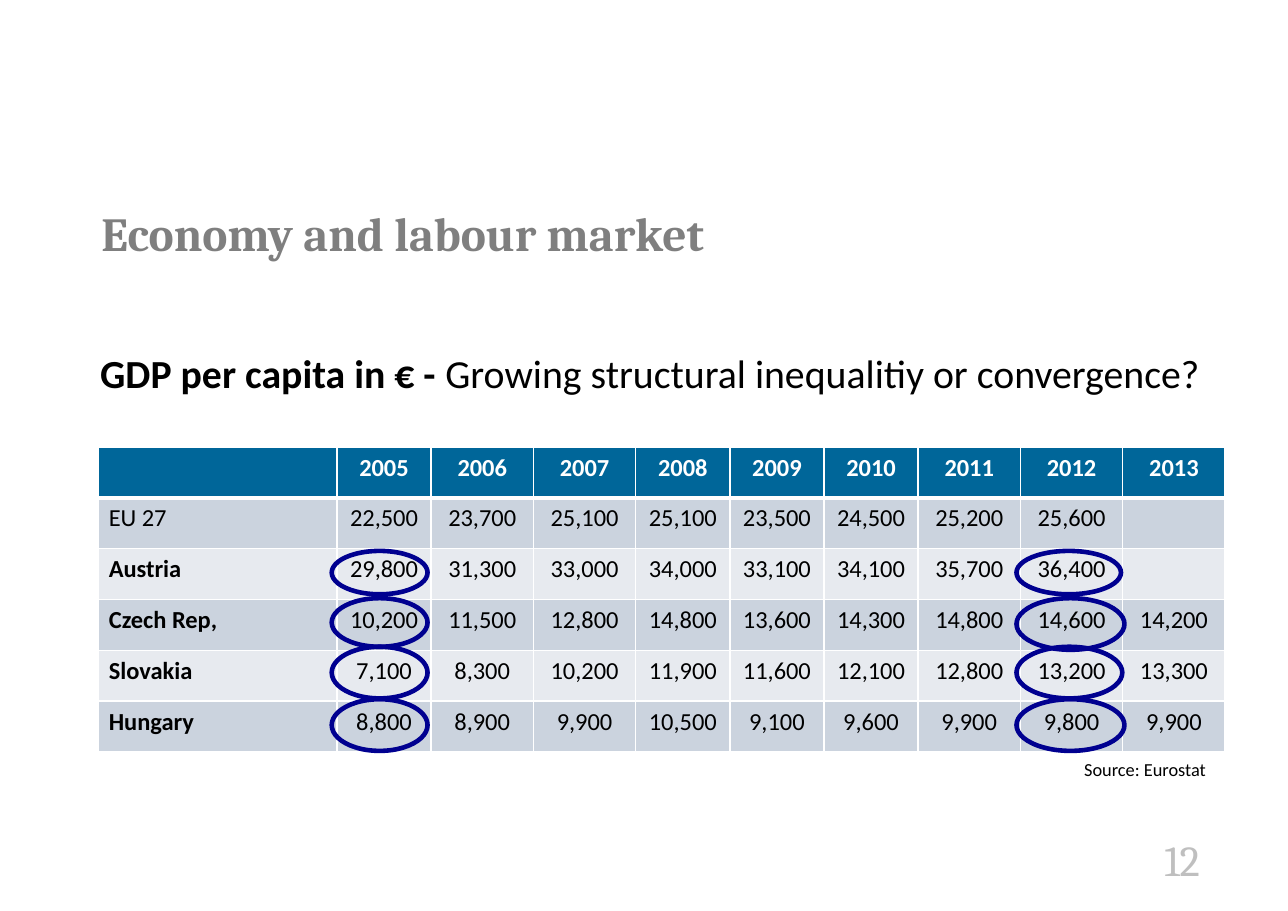
import pptx
import pptx.util
import pptx.dml.color
import pptx.enum.shapes
import pptx.enum.text
import pptx.oxml
import pptx.oxml.ns

Cm = pptx.util.Cm
Pt = pptx.util.Pt
ALIGN = pptx.enum.text.PP_ALIGN

COLORS = {
    "head": "006699", "dark": "CBD3DE", "light": "E7EAEF", "rule": "FFFFFF",
    "ring": "000090", "text": "000000", "title": "7F7F7F", "page": "BFBFBF",
}

ROWS = [
    ["", "2005", "2006", "2007", "2008", "2009", "2010", "2011", "2012", "2013"],
    ["EU 27", "22,500", "23,700", "25,100", "25,100", "23,500", "24,500", "25,200", "25,600", ""],
    ["Austria", "29,800", "31,300", "33,000", "34,000", "33,100", "34,100", "35,700", "36,400", ""],
    ["Czech Rep,", "10,200", "11,500", "12,800", "14,800", "13,600", "14,300", "14,800", "14,600", "14,200"],
    ["Slovakia", "7,100", "8,300", "10,200", "11,900", "11,600", "12,100", "12,800", "13,200", "13,300"],
    ["Hungary", "8,800", "8,900", "9,900", "10,500", "9,100", "9,600", "9,900", "9,800", "9,900"],
]
LABEL, SLIM, WIDE = 5.51, 2.17, 2.36
COLS = [LABEL, SLIM, WIDE, WIDE, SLIM, SLIM, SLIM, WIDE, WIDE, WIDE]

# Rings per country: top, then width and height for 2005 and for 2012
RINGS = [
    (12.7, (2.21, 1), (2.41, 1)),
    (13.79, (2.21, 1.12), (2.49, 1.19)),
    (14.91, (2.21, 1.19), (2.44, 1.19)),
    (16.12, (2.21, 1.19), (2.49, 1.19)),
]
RING_LEFTS = (7.65, 23.44)


def rgb(name):
    return pptx.dml.color.RGBColor.from_string(COLORS[name])


def write(para, text, size=16, font="Calibri", color="text", bold=False, align=ALIGN.LEFT):
    para.alignment = align
    run = para.add_run()
    run.text = text
    run.font.size = Pt(size)
    run.font.name = font
    run.font.bold = bold
    run.font.color.rgb = rgb(color)


def add_box(slide, left, top, width, height):
    frame = slide.shapes.add_textbox(Cm(left), Cm(top), Cm(width), Cm(height)).text_frame
    frame.word_wrap = True
    return frame.paragraphs[0]


def add_title(slide, text):
    title = slide.shapes.title
    title.left, title.top, title.width, title.height = Cm(2.06), Cm(4.7), Cm(26.59), Cm(2.59)
    frame = title.text_frame
    frame.auto_size = pptx.enum.text.MSO_AUTO_SIZE.NONE
    frame.vertical_anchor = pptx.enum.text.MSO_ANCHOR.TOP
    frame.margin_left = frame.margin_right = Cm(0.28)
    para = frame.paragraphs[0]
    para.line_spacing = Pt(34)
    write(para, text, size=31, font="Cambria", color="title", bold=True)


def add_rules(cell, top, bottom):
    props = cell._tc.get_or_add_tcPr()
    for side, width in (("L", 1), ("R", 1), ("T", top), ("B", bottom)):
        props.append(pptx.oxml.parse_xml(
            f'<a:ln{side} {pptx.oxml.ns.nsdecls("a")} w="{Pt(width)}"><a:solidFill>'
            f'<a:srgbClr val="{COLORS["rule"]}"/></a:solidFill></a:ln{side}>'))


def fill_cell(cell, row, col, text):
    add_rules(cell, top=3 if row == 1 else 1, bottom=3 if row == 0 else 1)
    cell.fill.solid()
    cell.fill.fore_color.rgb = rgb("head" if row == 0 else "dark" if row % 2 else "light")
    cell.margin_left = cell.margin_right = Cm(0.25)
    cell.margin_top = cell.margin_bottom = Cm(0.13)
    if text:
        write(cell.text_frame.paragraphs[0], text,
              color="rule" if row == 0 else "text",
              bold=row == 0 or (col == 0 and row > 1),
              align=ALIGN.CENTER if col else ALIGN.LEFT)


def add_grid(slide):
    high = 1.17
    table = slide.shapes.add_table(len(ROWS), len(COLS), Cm(2.26), Cm(10.31),
                                   Cm(sum(COLS)), Cm(high * len(ROWS))).table
    table.horz_banding = False
    for col, width in enumerate(COLS):
        table.columns[col].width = Cm(width)
    for row, texts in enumerate(ROWS):
        table.rows[row].height = Cm(high)
        for col, text in enumerate(texts):
            fill_cell(table.cell(row, col), row, col, text)


def add_ring(slide, left, top, width, height):
    ring = slide.shapes.add_shape(pptx.enum.shapes.MSO_SHAPE.OVAL,
                                  Cm(left), Cm(top), Cm(width), Cm(height))
    ring.shadow.inherit = False
    ring.fill.background()
    ring.line.color.rgb = rgb("ring")
    ring.line.width = Pt(3)


def main():
    deck = pptx.Presentation()
    deck.slide_width, deck.slide_height = Cm(29.7), Cm(21)
    slide = deck.slides.add_slide(deck.slide_layouts[5])

    # Title and page number
    add_title(slide, "Economy and labour market")
    write(add_box(slide, 21.92, 19.1, 6, 1.45), "12", size=28, font="Cambria",
          color="page", align=ALIGN.RIGHT)

    # Table and its source
    add_grid(slide)
    write(add_box(slide, 2.06, 17.35, 26, 0.76), "Source: Eurostat", size=12,
          align=ALIGN.RIGHT)

    # Rings around the first and last full year
    for top, *sizes in RINGS:
        for left, (width, height) in zip(RING_LEFTS, sizes):
            add_ring(slide, left, top, width, height)

    # Table heading
    para = add_box(slide, 2.06, 7.92, 26.8, 1.37)
    write(para, "GDP per capita in € - ", size=26, bold=True)
    write(para, "Growing structural inequalitiy or convergence?", size=26)

    deck.save("out.pptx")


if __name__ == "__main__":
    main()
